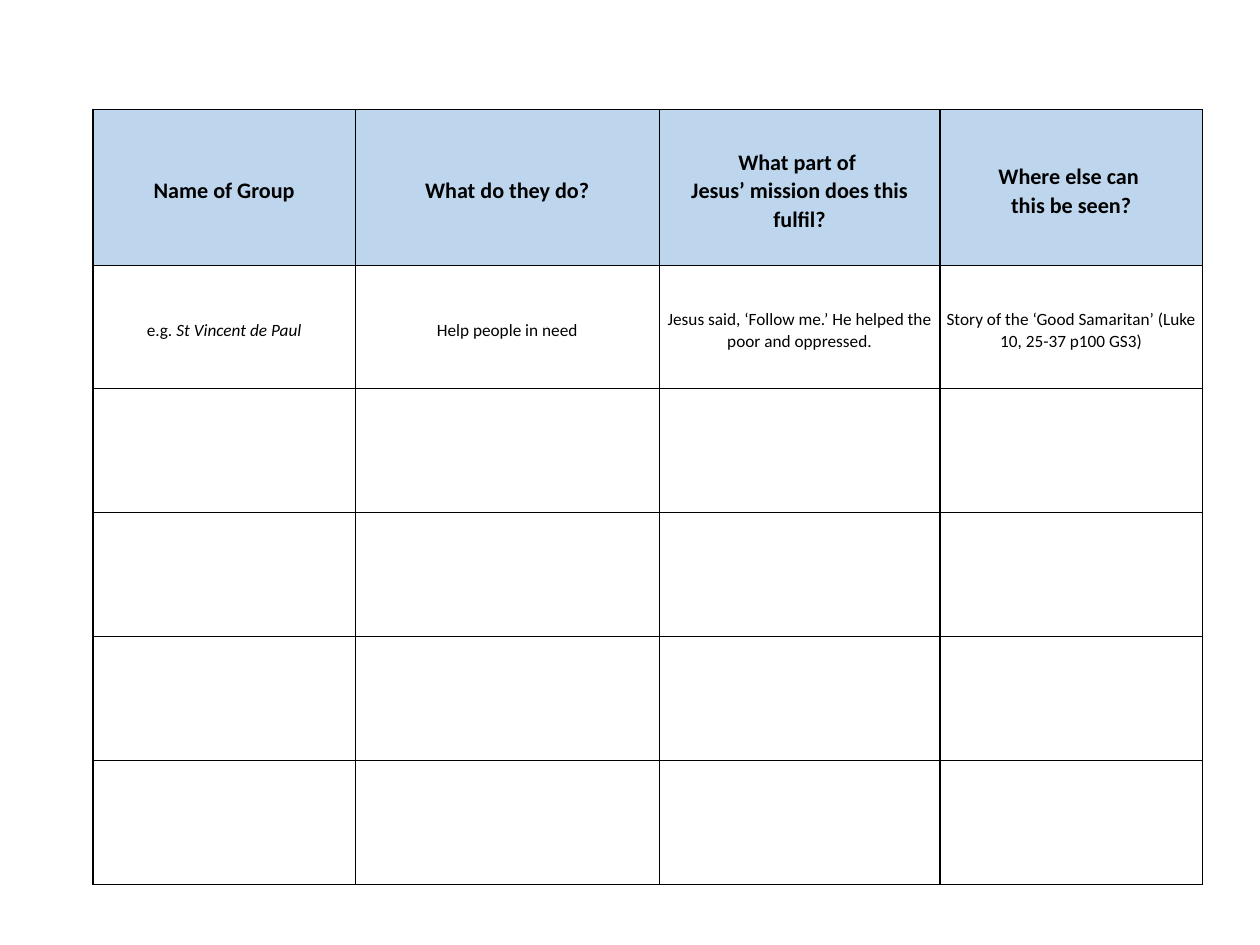
from pptx import Presentation
from pptx.dml.color import RGBColor
from pptx.enum.text import MSO_ANCHOR as Anchor, PP_ALIGN as Align
from pptx.oxml import parse_xml
from pptx.oxml.ns import nsdecls
from pptx.util import Inches, Pt

BLACK = RGBColor(0x00, 0x00, 0x00)
WHITE = RGBColor(0xFF, 0xFF, 0xFF)
PALE_BLUE = RGBColor(0xBD, 0xD6, 0xEE)

COLUMN_WIDTHS = [20.82, 24.12, 22.29, 20.82]
ROW_HEIGHTS = [16.5, 13.03] + [13.12] * 4
HEADINGS = [
    "Name of Group",
    "What do they do?",
    "What part of \nJesus’ mission does this fulfil?",
    "Where else can \nthis be seen?",
]
EXAMPLE = [
    [("e.g. ", False), ("St Vincent de Paul", True)],
    [("Help people in need", False)],
    [("Jesus said, ‘Follow me.’ He helped the poor and oppressed.", False)],
    [("Story of the ‘Good Samaritan’ (Luke 10, 25-37 p100 GS3)", False)],
]


def add_text(para, text, size=14, bold=False, italic=False, color=BLACK, name="Calibri"):
    for index, line in enumerate(text.split("\n")):
        if index:
            para.add_line_break()
        span = para.add_run()
        span.text = line
        font = span.font
        font.name, font.size, font.bold, font.italic = name, Pt(size), bold, italic
        font.color.rgb = color


class Worksheet:
    """A page on a grid of 100 columns by 100 rows, with the table style."""

    def __init__(self, deck):
        self.page = deck.slides.add_slide(deck.slide_layouts[6])
        self.column = deck.slide_width / 100
        self.row = deck.slide_height / 100

    def across(self, columns):
        return round(columns * self.column)

    def down(self, rows):
        return round(rows * self.row)

    def add_table(self, left, top, widths, heights):
        frame = self.page.shapes.add_table(
            len(heights), len(widths), self.across(left), self.down(top),
            self.across(sum(widths)), self.down(sum(heights)))
        table = frame.table
        table.first_row = table.horz_banding = False
        for column, width in zip(table.columns, widths):
            column.width = self.across(width)
        for row, height in zip(table.rows, heights):
            row.height = self.down(height)
        for cell in table.iter_cells():
            self.style_cell(cell)
        return table

    def style_cell(self, cell, line_width=1):
        cell.margin_left = cell.margin_right = Inches(0.07)
        cell.margin_top, cell.margin_bottom = Inches(0.06), 0
        cell.vertical_anchor = Anchor.MIDDLE
        properties = cell._tc.get_or_add_tcPr()
        for side in ("lnL", "lnR", "lnT", "lnB"):
            properties.append(parse_xml(
                f'<a:{side} {nsdecls("a")} w="{Pt(line_width)}"><a:solidFill>'
                f'<a:srgbClr val="{BLACK}"/></a:solidFill></a:{side}>'))
        self.fill_cell(cell, WHITE)

    def fill_cell(self, cell, color):
        cell.fill.solid()
        cell.fill.fore_color.rgb = color

    def start_text(self, cell, space_after=0):
        para = cell.text_frame.paragraphs[0]
        para.alignment = Align.CENTER
        para.line_spacing = 1.07
        para.space_after = Pt(space_after)
        return para


def main():
    deck = Presentation()
    deck.slide_width, deck.slide_height = Inches(14.22), Inches(10.67)
    sheet = Worksheet(deck)
    table = sheet.add_table(7.38, 11.62, COLUMN_WIDTHS, ROW_HEIGHTS)
    for index, (heading, spans) in enumerate(zip(HEADINGS, EXAMPLE)):
        heading_cell = table.cell(0, index)
        sheet.fill_cell(heading_cell, PALE_BLUE)
        add_text(sheet.start_text(heading_cell, space_after=8), heading, size=18, bold=True)
        para = sheet.start_text(table.cell(1, index), space_after=0 if index else 8)
        for text, italic in spans:
            add_text(para, text, italic=italic)
    deck.save("out.pptx")


if __name__ == "__main__":
    main()
